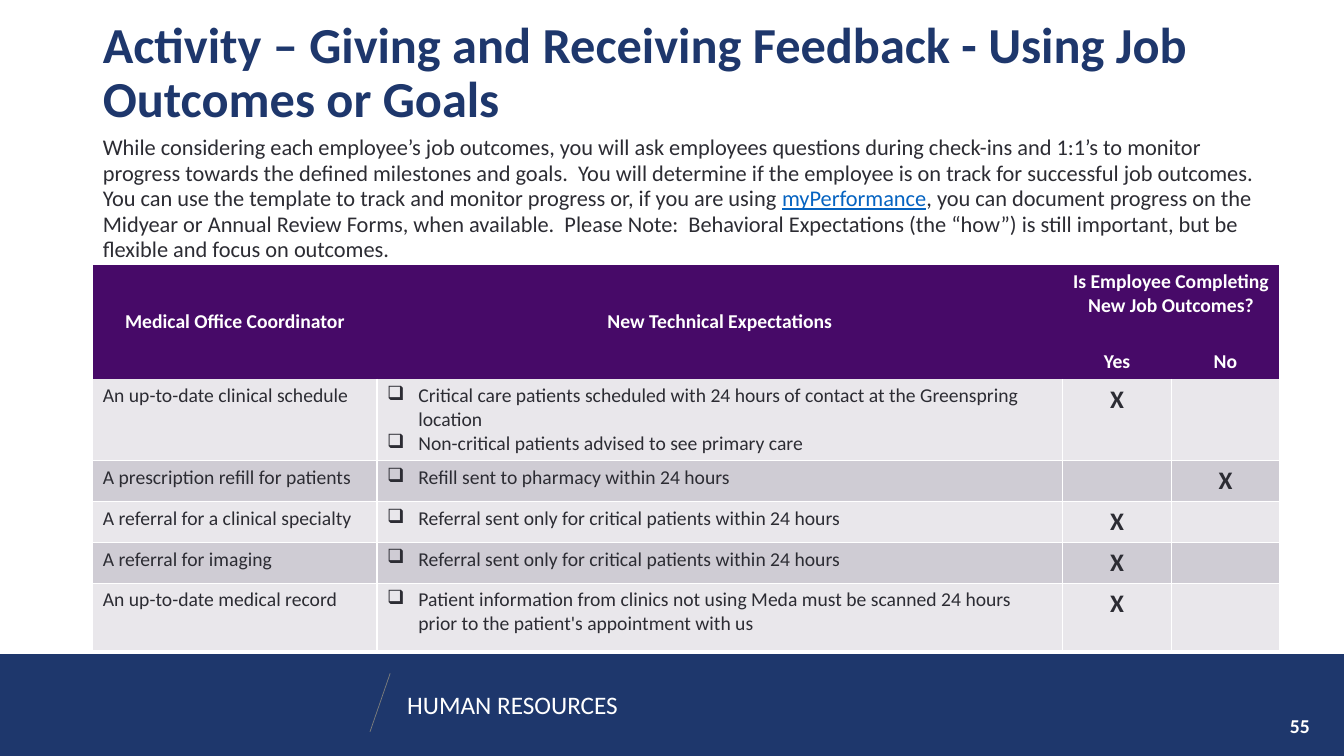
from lxml.etree import SubElement
from pptx import Presentation
from pptx.dml.color import RGBColor
from pptx.enum.shapes import MSO_CONNECTOR, MSO_SHAPE
from pptx.enum.text import MSO_ANCHOR, MSO_AUTO_SIZE, PP_ALIGN
from pptx.oxml.ns import qn
from pptx.util import Pt

PX = 9144  # 100 px to the inch
NAVY, PURPLE, WHITE, INK, LINK = "1E376C", "470A68", "FFFFFF", "2C2C33", "0563C1"
BANDS = ["E9E7EB", "CFCCD4"]
PLAIN_TABLE = "{2D5ABB26-0587-4C30-8999-92F81FD0307C}"
CENTER = {"alignment": PP_ALIGN.CENTER}

TITLE = "Activity – Giving and Receiving Feedback - Using Job Outcomes or Goals"
INTRO = [
    ("While considering each employee’s job outcomes, you will ask employees questions during "
     "check-ins and 1:1’s to monitor progress towards the defined milestones and goals.  You will "
     "determine if the employee is on track for successful job outcomes.  You can use the template "
     "to track and monitor progress or, if you are using ", {}),
    ("myPerformance", {"color": LINK, "underline": True}),
    (", you can document progress on the Midyear or Annual Review Forms, when available.  Please "
     "Note:  Behavioral Expectations (the “how”) is still important, but be flexible and focus on "
     "outcomes.", {}),
]
COLUMNS = [282, 680, 108, 107]
ROWS = [79, 34, 79, 39, 39, 39, 67]
# Row, column, last row, last column, text
HEADINGS = [
    (0, 0, 1, 0, "Medical Office Coordinator"),
    (0, 1, 1, 1, "New Technical Expectations"),
    (0, 2, 0, 3, "Is Employee Completing New Job Outcomes?"),
    (1, 2, 1, 2, "Yes"),
    (1, 3, 1, 3, "No"),
]
# Outcome, expectations, completed
OUTCOMES = [
    ("An up-to-date clinical schedule",
     ["Critical care patients scheduled with 24 hours of contact at the Greenspring location",
      "Non-critical patients advised to see primary care"], True),
    ("A prescription refill for patients", ["Refill sent to pharmacy within 24 hours"], False),
    ("A referral for a clinical specialty",
     ["Referral sent only for critical patients within 24 hours"], True),
    ("A referral for imaging",
     ["Referral sent only for critical patients within 24 hours"], True),
    ("An up-to-date medical record",
     ["Patient information from clinics not using Meda must be scanned 24 hours prior to the "
      "patient's appointment with us"], True),
]


def rgb(color):
    return RGBColor.from_string(color)


def px(*lengths):
    return [length * PX for length in lengths]


class SlideBuilder:
    def __init__(self, page, font="Calibri"):
        self.page = page
        self.font = font

    def fill_text(self, frame, paragraphs, look, layout=None, bullet=None):
        """Each paragraph is a list of (text, look changes) spans."""
        for index, spans in enumerate(paragraphs):
            para = frame.paragraphs[0] if index == 0 else frame.add_paragraph()
            if bullet is not None:
                self.set_bullet(para, bullet)
            for name, value in (layout or {}).items():
                setattr(para, name, value)
            for text, changes in spans:
                span = para.add_run()
                span.text = text
                values = {"name": self.font, **look, **changes}
                span.font.color.rgb = rgb(values.pop("color"))
                for name, value in values.items():
                    setattr(span.font, name, value)

    def set_bullet(self, para, bullet):
        """An empty bullet switches the inherited one off."""
        props = para._p.get_or_add_pPr()
        indent = 31 * PX if bullet else 0
        props.set("marL", str(indent))
        props.set("indent", str(-indent))
        if bullet:
            SubElement(props, qn("a:buChar")).set("char", bullet)
        else:
            SubElement(props, qn("a:buNone"))

    def frame(self, box, anchor):
        settings = {"word_wrap": True, "auto_size": MSO_AUTO_SIZE.NONE, "vertical_anchor": anchor}
        for name, value in settings.items():
            setattr(box.text_frame, name, value)
        return box.text_frame

    def placeholder(self, number, place, spans, look, layout, anchor, bullet=None):
        box = self.page.placeholders[number]
        box.left, box.top, box.width, box.height = px(*place)
        self.fill_text(self.frame(box, anchor), [spans], look, layout, bullet)

    def text(self, place, text, look, layout=None, anchor=MSO_ANCHOR.TOP):
        box = self.page.shapes.add_textbox(*px(*place))
        self.fill_text(self.frame(box, anchor), [[(text, {})]], look, layout)

    def bar(self, place, color):
        shape = self.page.shapes.add_shape(MSO_SHAPE.RECTANGLE, *px(*place))
        shape.shadow.inherit = False
        shape.fill.solid()
        shape.fill.fore_color.rgb = rgb(color)
        shape.line.fill.background()

    def line(self, ends, color, width):
        line = self.page.shapes.add_connector(MSO_CONNECTOR.STRAIGHT, *px(*ends))
        line.line.color.rgb = rgb(color)
        line.line.width = Pt(width)
        SubElement(line._element.spPr, qn("a:effectLst"))

    def table(self, left, top, columns, rows):
        place = px(left, top, sum(columns), sum(rows))
        table = self.page.shapes.add_table(len(rows), len(columns), *place).table
        table.first_row = table.horz_banding = False
        table._tbl.tblPr.find(qn("a:tableStyleId")).text = PLAIN_TABLE
        for column, width in zip(table.columns, columns):
            column.width = width * PX
        for row, height in zip(table.rows, rows):
            row.height = height * PX
        return table

    def cell(self, cell, fill, borders=()):
        props = cell._tc.get_or_add_tcPr()
        for side in borders:
            border = SubElement(props, qn(f"a:ln{side}"), w=str(Pt(1)))
            SubElement(SubElement(border, qn("a:solidFill")), qn("a:srgbClr")).set("val", WHITE)
        cell.fill.solid()
        cell.fill.fore_color.rgb = rgb(fill)


def main():
    deck = Presentation()
    deck.slide_width, deck.slide_height = px(1333, 750)
    builder = SlideBuilder(deck.slides.add_slide(deck.slide_layouts[1]))

    # Footer
    builder.bar((0, 649, 1333, 101), NAVY)
    builder.text((394, 679, 345, 40), "HUMAN RESOURCES", {"size": Pt(18), "color": WHITE})
    builder.line((367, 726, 387, 668), "7E7E7C", 0.5)

    # Title and introduction
    builder.placeholder(0, (92, 10, 1176, 127), [(TITLE, {})],
                        {"size": Pt(36), "color": NAVY, "bold": True},
                        {"alignment": PP_ALIGN.LEFT, "line_spacing": 0.9}, MSO_ANCHOR.MIDDLE)
    builder.placeholder(1, (92, 129, 1176, 116), INTRO, {"size": Pt(16), "color": INK},
                        {"line_spacing": 0.95, "space_before": Pt(0), "space_after": Pt(2)},
                        MSO_ANCHOR.TOP, bullet="")

    # Table headings
    table = builder.table(92, 263, COLUMNS, ROWS)
    heading = {"size": Pt(14), "color": WHITE, "bold": True}
    for row, column, last_row, last_column, text in HEADINGS:
        cell = table.cell(row, column)
        if (row, column) != (last_row, last_column):
            cell.merge(table.cell(last_row, last_column))
        if last_row > row:
            cell.vertical_anchor = MSO_ANCHOR.MIDDLE
        builder.fill_text(cell.text_frame, [[(text, {})]], heading, CENTER)
    for row in range(2):
        for column in range(len(COLUMNS)):
            builder.cell(table.cell(row, column), PURPLE)

    # Job outcomes
    entry = {"size": Pt(14), "color": INK, "bold": False}
    mark = {"size": Pt(18), "color": INK, "bold": True}
    for index, (outcome, expectations, completed) in enumerate(OUTCOMES):
        cells = [table.cell(index + 2, column) for column in range(len(COLUMNS))]
        for cell in cells:
            builder.cell(cell, BANDS[index % 2], "LRTB" if index else "LRB")
        builder.fill_text(cells[0].text_frame, [[(outcome, {})]], entry)
        builder.fill_text(cells[1].text_frame, [[(text, {})] for text in expectations], entry,
                          bullet="❑")
        builder.fill_text(cells[2 if completed else 3].text_frame, [[("X", {})]], mark, CENTER)

    # Page number
    builder.text((1174, 700, 135, 40), "55", {"size": Pt(14), "color": WHITE, "bold": True},
                 {"alignment": PP_ALIGN.RIGHT}, MSO_ANCHOR.MIDDLE)
    deck.save("out.pptx")


if __name__ == "__main__":
    main()
